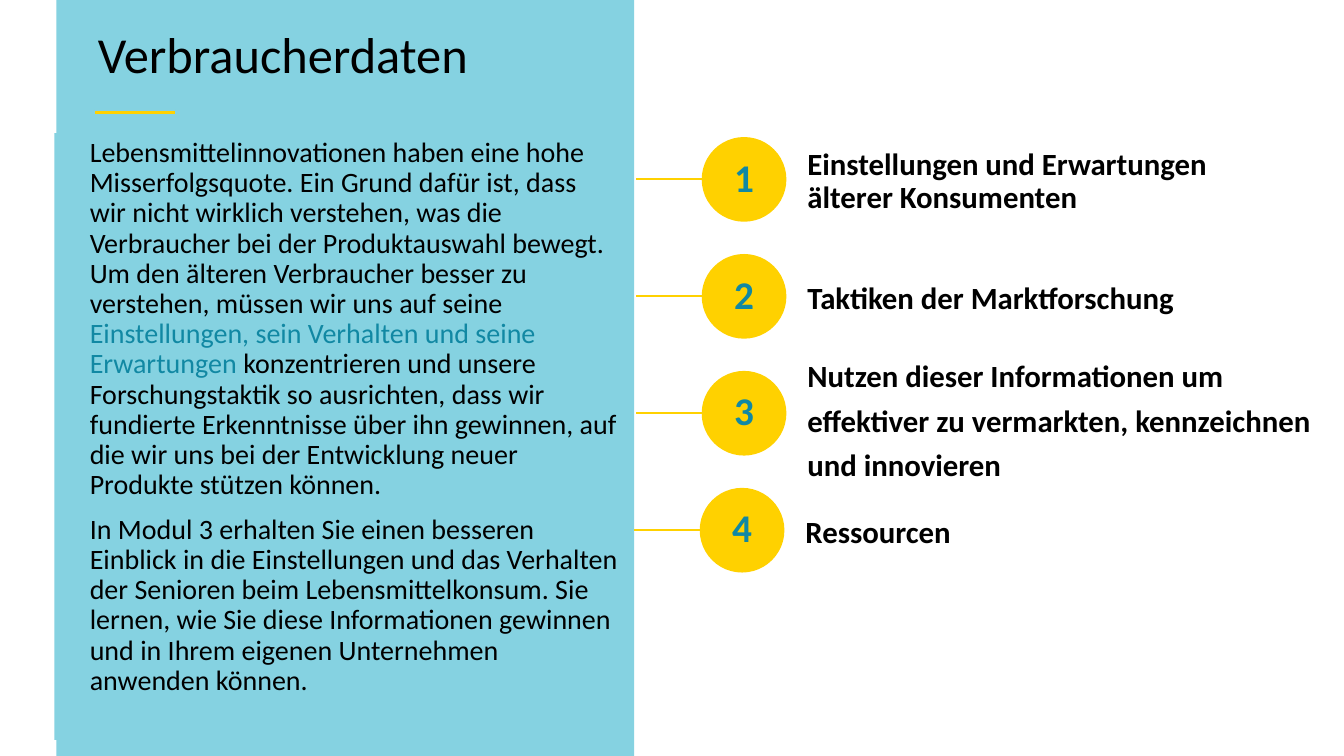
from dataclasses import dataclass

import pptx
import pptx.dml.color
import pptx.enum.shapes
import pptx.enum.text
import pptx.oxml.xmlchemy
import pptx.util

Inches = pptx.util.Inches
Pt = pptx.util.Pt
RGBColor = pptx.dml.color.RGBColor
OxmlElement = pptx.oxml.xmlchemy.OxmlElement
Shapes = pptx.enum.shapes.MSO_SHAPE
Anchor = pptx.enum.text.MSO_ANCHOR
Align = pptx.enum.text.PP_ALIGN


@dataclass(frozen=True)
class Theme:
    font: str = "Calibri"
    ink: RGBColor = RGBColor(0x00, 0x00, 0x00)
    teal: RGBColor = RGBColor(0x11, 0x88, 0xA3)
    panel: RGBColor = RGBColor(0x85, 0xD2, 0xE1)
    yellow: RGBColor = RGBColor(0xFF, 0xD1, 0x00)
    title_size: int = 36
    number_size: int = 28
    topic_size: int = 22
    body_size: int = 20


@dataclass(frozen=True)
class Topic:
    label: str
    width: float = 4.88
    line_spacing: float = 0.9
    shift: float = 0.0


THEME = Theme()
TOPICS = [
    Topic("Einstellungen und Erwartungen älterer Konsumenten"),
    Topic("Taktiken der Marktforschung"),
    Topic("Nutzen dieser Informationen um effektiver zu vermarkten, "
          "kennzeichnen und innovieren", width=5.24, line_spacing=1.2),
    Topic("Ressourcen", shift=-0.02),
]
TOPIC_TOP, TOPIC_PITCH = 1.36, 1.16
CIRCLE_LEFT, CIRCLE_SIZE = 6.96, 0.84
LINE_LENGTH = 0.65
LABEL_LEFT, LABEL_HEIGHT = 7.91, 0.9

# Each paragraph is a list of (text, colour) pieces.
BODY = [
    [("Lebensmittelinnovationen haben eine hohe Misserfolgsquote. Ein Grund "
      "dafür ist, dass wir nicht wirklich verstehen, was die Verbraucher bei "
      "der Produktauswahl bewegt. Um den älteren Verbraucher besser zu "
      "verstehen, müssen wir uns auf seine ", THEME.ink),
     ("Einstellungen, sein Verhalten und seine Erwartungen ", THEME.teal),
     ("konzentrieren und unsere Forschungstaktik so ausrichten, dass wir "
      "fundierte Erkenntnisse über ihn gewinnen, auf die wir uns bei der "
      "Entwicklung neuer Produkte stützen können.", THEME.ink)],
    [("In Modul 3 erhalten Sie einen besseren Einblick in die Einstellungen "
      "und das Verhalten der Senioren beim Lebensmittelkonsum. Sie lernen, "
      "wie Sie diese Informationen gewinnen und in Ihrem eigenen Unternehmen "
      "anwenden können.", THEME.ink)],
]


def place(shape, left: float, top: float, width: float, height: float) -> None:
    shape.left, shape.top = Inches(left), Inches(top)
    shape.width, shape.height = Inches(width), Inches(height)


def style_font(font, size: int, color: RGBColor, bold: bool = False) -> None:
    font.name, font.size, font.bold = THEME.font, Pt(size), bold
    font.color.rgb = color


def write_line(shape, text: str, size: int, color: RGBColor, bold: bool = False,
               align: Align = Align.LEFT, anchor: Anchor = Anchor.MIDDLE,
               line_spacing: float = 0.9) -> None:
    """Fill a shape with one uniformly formatted paragraph."""
    frame = shape.text_frame
    frame.text = text
    frame.word_wrap = True
    frame.auto_size = pptx.enum.text.MSO_AUTO_SIZE.NONE
    frame.vertical_anchor = anchor
    paragraph = frame.paragraphs[0]
    paragraph.alignment = align
    paragraph.line_spacing = line_spacing
    paragraph.space_before = Pt(0)
    style_font(paragraph.runs[0].font, size, color, bold)


def add_filled(slide, preset: Shapes, left: float, top: float, width: float,
               height: float, color: RGBColor):
    shape = slide.shapes.add_shape(preset, Inches(left), Inches(top),
                                   Inches(width), Inches(height))
    shape.shadow.inherit = False
    shape.fill.solid()
    shape.fill.fore_color.rgb = color
    shape.line.fill.background()
    return shape


def add_panel(slide) -> None:
    """Draw the coloured panel and send it behind the placeholders."""
    panel = add_filled(slide, Shapes.RECTANGLE, 0.56, 0, 5.73, 7.54, THEME.panel)
    slide.shapes._spTree.insert(2, panel._element)


def fill_title(slide) -> None:
    title = slide.shapes.title
    place(title, 0.87, 0.25, 4.79, 0.66)
    write_line(title, "Verbraucherdaten", THEME.title_size, THEME.ink,
               anchor=Anchor.TOP)
    rule = add_filled(slide, Shapes.RECTANGLE, 0.94, 1.09, 0.8, 0.05, THEME.yellow)
    rule.line.color.rgb = THEME.panel
    rule.line.width = Pt(1)


def fill_body(slide) -> None:
    body = slide.placeholders[1]
    place(body, 0.54, 1.32, 5.7, 6.02)
    body.fill.solid()
    body.fill.fore_color.rgb = THEME.panel
    frame = body.text_frame
    frame.word_wrap = True
    frame.auto_size = pptx.enum.text.MSO_AUTO_SIZE.NONE
    frame.vertical_anchor = Anchor.TOP
    for index, pieces in enumerate(BODY):
        paragraph = frame.paragraphs[0] if index == 0 else frame.add_paragraph()
        properties = paragraph._p.get_or_add_pPr()
        properties.set("marL", str(int(Inches(0.25))))
        properties.set("indent", "0")
        properties.append(OxmlElement("a:buNone"))
        paragraph.line_spacing = 0.9
        paragraph.space_before = Pt(10 if index else 0)
        for text, color in pieces:
            run = paragraph.add_run()
            run.text = text
            style_font(run.font, THEME.body_size, color)


def add_topic(slide, index: int, topic: Topic) -> None:
    """Draw a topic's connecting line, numbered circle and label."""
    top = TOPIC_TOP + index * TOPIC_PITCH
    left = CIRCLE_LEFT + topic.shift
    middle = Inches(top + CIRCLE_SIZE / 2)
    line = slide.shapes.add_connector(
        pptx.enum.shapes.MSO_CONNECTOR.STRAIGHT,
        Inches(left - LINE_LENGTH), middle, Inches(left), middle)
    line.line.color.rgb = THEME.yellow
    line.line.width = Pt(1.5)
    line._element.spPr.append(OxmlElement("a:effectLst"))

    circle = add_filled(slide, Shapes.OVAL, left, top, CIRCLE_SIZE, CIRCLE_SIZE,
                        THEME.yellow)
    write_line(circle, str(index + 1), THEME.number_size, THEME.teal, bold=True,
               align=Align.CENTER)

    label = slide.shapes.add_textbox(
        Inches(LABEL_LEFT + topic.shift), Inches(top),
        Inches(topic.width), Inches(LABEL_HEIGHT))
    write_line(label, topic.label, THEME.topic_size, THEME.ink, bold=True,
               line_spacing=topic.line_spacing)


def main() -> None:
    deck = pptx.Presentation()
    deck.slide_width, deck.slide_height = Inches(13.33), Inches(7.5)
    slide = deck.slides.add_slide(deck.slide_layouts[1])
    add_panel(slide)
    fill_title(slide)
    fill_body(slide)
    for index, topic in enumerate(TOPICS):
        add_topic(slide, index, topic)
    deck.save("out.pptx")


if __name__ == "__main__":
    main()
